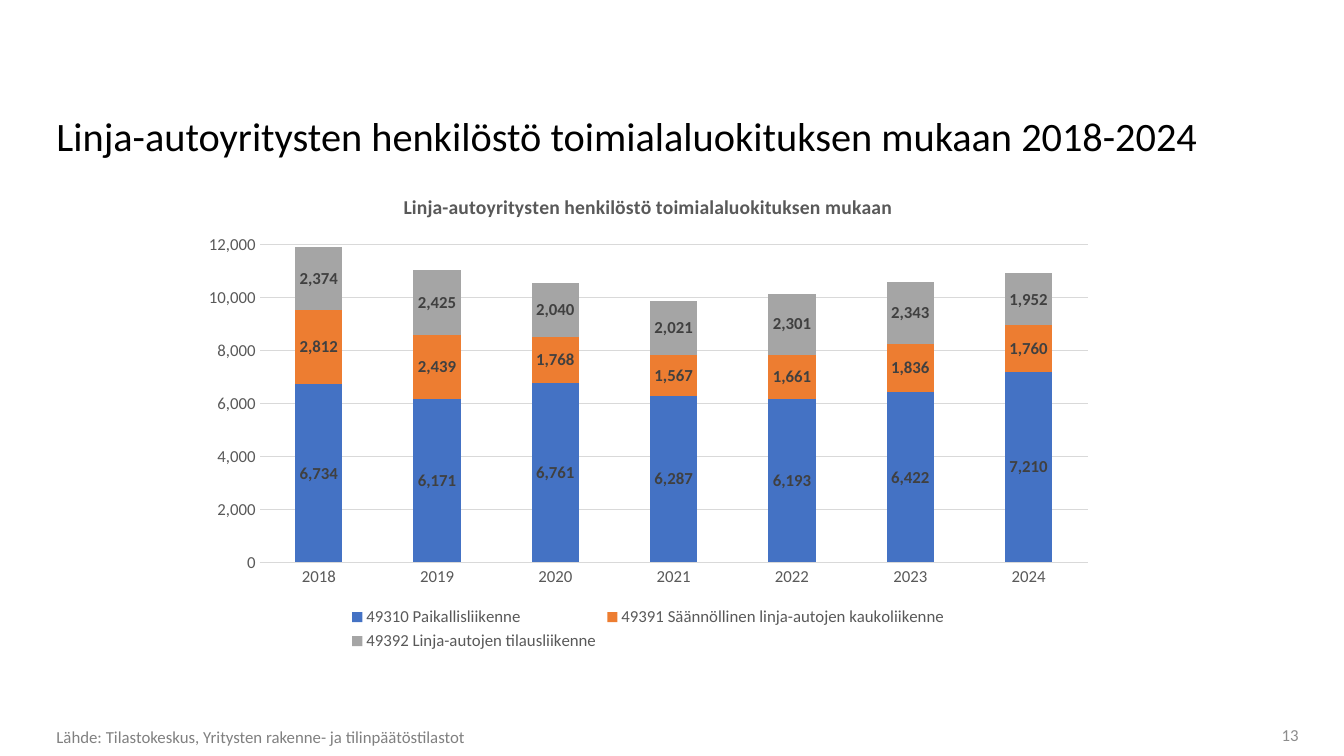
from pptx import Presentation
from pptx.chart.data import CategoryChartData
from pptx.dml.color import RGBColor
from pptx.enum.chart import XL_CHART_TYPE, XL_LEGEND_POSITION, XL_TICK_MARK
from pptx.enum.text import MSO_ANCHOR, MSO_AUTO_SIZE, PP_ALIGN
from pptx.oxml.ns import qn
from pptx.util import Inches, Pt
from lxml.etree import SubElement

FONT = "Calibri"
COLORS = {
    "title": "000000", "source": "808080", "number": "8C8C8C",
    "axis": "595959", "grid": "D9D9D9", "label": "404040",
    "local": "4472C4", "long": "ED7D31", "charter": "A5A5A5",
}
YEARS = [str(year) for year in range(2018, 2025)]
STAFF = [
    ("49310 Paikallisliikenne", "local",
     (6734, 6171, 6761, 6287, 6193, 6422, 7210)),
    ("49391 Säännöllinen linja-autojen kaukoliikenne", "long",
     (2812, 2439, 1768, 1567, 1661, 1836, 1760)),
    ("49392 Linja-autojen tilausliikenne", "charter",
     (2374, 2425, 2040, 2021, 2301, 2343, 1952)),
]


def color(name):
    return RGBColor.from_string(COLORS[name])


def style(font, size, name, bold=False):
    font.name = FONT
    font.size = Pt(size)
    font.bold = bold
    font.color.rgb = color(name)


def place(shape, left, top, width, height):
    shape.left, shape.top = Inches(left), Inches(top)
    shape.width, shape.height = Inches(width), Inches(height)


def write(shape, text, size, name, anchor, align=PP_ALIGN.LEFT):
    frame = shape.text_frame
    frame.text = text
    frame.word_wrap = True
    frame.auto_size = MSO_AUTO_SIZE.NONE
    frame.vertical_anchor = anchor
    par = frame.paragraphs[0]
    par.alignment = align
    par.space_before = Pt(0)
    style(par.runs[0].font, size, name)
    return par


def plain(par):
    props = par._p.get_or_add_pPr()
    props.set("marL", "0")
    props.set("indent", "0")
    SubElement(props, qn("a:buNone"))


def format_axes(chart):
    years, staff = chart.category_axis, chart.value_axis
    for axis in (years, staff):
        axis.major_tick_mark = XL_TICK_MARK.NONE
        axis.minor_tick_mark = XL_TICK_MARK.NONE
        style(axis.tick_labels.font, 12, "axis")
    staff.minimum_scale, staff.maximum_scale = 0, 12000
    staff.major_unit = 2000
    staff.tick_labels.number_format = "#,##0"
    staff.tick_labels.number_format_is_linked = False
    staff.format.line.fill.background()
    for line in (years.format.line, staff.major_gridlines.format.line):
        line.color.rgb = color("grid")
        line.width = Pt(0.75)


def format_series(series, name):
    series.format.fill.solid()
    series.format.fill.fore_color.rgb = color(name)
    labels = series.data_labels
    labels.show_value = True
    labels.number_format = "#,##0"
    labels.number_format_is_linked = False
    style(labels.font, 12, "label", True)


def add_staff(slide):
    data = CategoryChartData()
    data.categories = YEARS
    for label, _, values in STAFF:
        data.add_series(label, values)
    chart = slide.shapes.add_chart(
        XL_CHART_TYPE.COLUMN_STACKED, Inches(1.89), Inches(1.73),
        Inches(9.08), Inches(4.77), data).chart
    style(chart.font, 10, "title")
    frame = chart.chart_title.text_frame
    frame.text = "Linja-autoyritysten henkilöstö toimialaluokituksen mukaan"
    style(frame.paragraphs[0].runs[0].font, 14, "axis", True)
    chart.has_legend = True
    chart.legend.position = XL_LEGEND_POSITION.BOTTOM
    chart.legend.include_in_layout = False
    style(chart.legend.font, 12, "axis")
    format_axes(chart)
    plot = chart.plots[0]
    plot.gap_width, plot.overlap = 150, 100
    plot.vary_by_categories = False
    for series, (_, name, _) in zip(plot.series, STAFF):
        format_series(series, name)


def main():
    deck = Presentation()
    deck.slide_width, deck.slide_height = Inches(13.33), Inches(7.5)
    slide = deck.slides.add_slide(deck.slide_layouts[1])

    title = slide.shapes.title
    place(title, 0.46, 1, 12.42, 0.63)
    write(title, "Linja-autoyritysten henkilöstö toimialaluokituksen mukaan 2018-2024",
          28.8, "title", MSO_ANCHOR.BOTTOM)

    source = slide.placeholders[1]
    place(source, 0.46, 7.19, 11.81, 0.26)
    par = write(source, "Lähde: Tilastokeskus, Yritysten rakenne- ja tilinpäätöstilastot",
                12, "source", MSO_ANCHOR.MIDDLE)
    plain(par)
    par.line_spacing = 0.9

    add_staff(slide)

    number = slide.shapes.add_textbox(
        Inches(12.05), Inches(7.14), Inches(0.83), Inches(0.3))
    number.text_frame.margin_right = 0
    write(number, "13", 12, "number", MSO_ANCHOR.MIDDLE, PP_ALIGN.RIGHT)

    deck.save("out.pptx")


if __name__ == "__main__":
    main()
